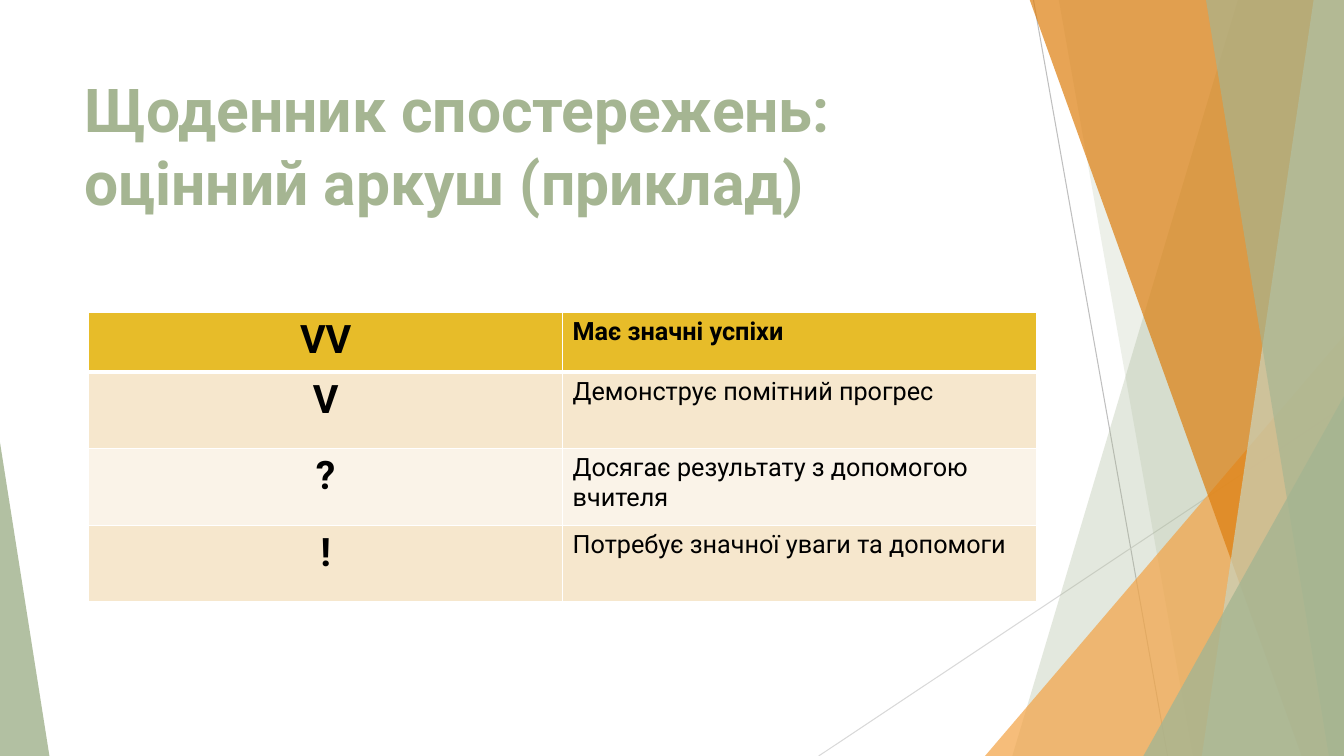
from lxml import etree
from pptx import Presentation, util as u
from pptx.dml.color import RGBColor
from pptx.enum import shapes, text
from pptx.oxml import ns

PX = 9144  # EMU, 100 px to the inch
WIDTH, HEIGHT = 1333, 750
SAGE, AMBER, ORANGE, PALE_SAGE = "A5B592", "F3A447", "DD7E0E", "C9D3BE"
GOLD, CREAM, IVORY = "E7BC29", "F6E7CD", "FAF3E8"
BLACK, WHITE = "000000", "FFFFFF"


def rgb(code):
    return RGBColor.from_string(code)


def px(*lengths):
    return [u.Emu(length * PX) for length in lengths]


def add_xml(parent, tag, **attributes):
    return etree.SubElement(parent, ns.qn(tag), **attributes)


class SlideBuilder:
    def __init__(self, slide, font_name):
        self.slide = slide
        self.shapes = slide.shapes
        self.font_name = font_name

    def line(self, start, end, color):
        ray = self.shapes.add_connector(
            shapes.MSO_CONNECTOR.STRAIGHT, *px(*start, *end))
        ray.line.color.rgb = rgb(color)
        ray.line.width = u.Pt(0.75)
        add_xml(ray._element.spPr, "a:effectLst")

    def paint(self, shape, color, opacity):
        shape.shadow.inherit = False
        shape.fill.solid()
        shape.fill.fore_color.rgb = rgb(color)
        shape.line.fill.background()
        color_xml = shape._element.spPr.find(".//" + ns.qn("a:srgbClr"))
        add_xml(color_xml, "a:alpha", val=str(opacity * 1000))

    def ribbon(self, top_x, bottom_x, color, opacity):
        """Fill from a slanted left edge to the right side of the slide."""
        outline = self.shapes.build_freeform(top_x, -1, scale=PX)
        outline.add_line_segments(
            [(WIDTH, -1), (WIDTH, HEIGHT), (bottom_x, HEIGHT)])
        self.paint(outline.convert_to_shape(), color, opacity)

    def triangle(self, left, top, width, apex, color, opacity):
        """Stand a triangle on the bottom edge, its apex at 0 (left) to 1 (right)."""
        wedge = self.shapes.add_shape(
            shapes.MSO_SHAPE.ISOSCELES_TRIANGLE,
            *px(left, top, width, HEIGHT - top))
        wedge.adjustments[0] = apex
        self.paint(wedge, color, opacity)

    def fill_text(self, frame, words, size, color, bold, align):
        frame.word_wrap = True
        frame.text = words
        for paragraph in frame.paragraphs:
            paragraph.alignment = align
            for run in paragraph.runs:
                style = {"name": self.font_name, "size": u.Pt(size), "bold": bold}
                for key, value in style.items():
                    setattr(run.font, key, value)
                run.font.color.rgb = rgb(color)

    def title(self, words, box, size, color):
        frame = self.shapes.add_textbox(*px(*box)).text_frame
        frame.vertical_anchor = text.MSO_ANCHOR.TOP
        self.fill_text(frame, words, size, color, True, text.PP_ALIGN.LEFT)

    def borders(self, cell, bottom_width):
        properties = cell._tc.get_or_add_tcPr()
        widths = {"a:lnL": 1, "a:lnR": 1, "a:lnT": 1, "a:lnB": bottom_width}
        for position, (tag, width) in enumerate(widths.items()):
            edge = etree.Element(ns.qn(tag), w=str(u.Pt(width)))
            add_xml(add_xml(edge, "a:solidFill"), "a:srgbClr", val=WHITE)
            properties.insert(position, edge)

    def table(self, rows, box, row_heights, fills):
        grid = self.shapes.add_table(len(rows), 2, *px(*box)).table
        for index, (marks, height, fill) in enumerate(zip(rows, row_heights, fills)):
            grid.rows[index].height = px(height)[0]
            header = index == 0
            formats = [(28, True, text.PP_ALIGN.CENTER),
                       (18, header, text.PP_ALIGN.LEFT)]
            for column, (words, (size, bold, align)) in enumerate(zip(marks, formats)):
                cell = grid.cell(index, column)
                cell.fill.solid()
                cell.fill.fore_color.rgb = rgb(fill)
                self.borders(cell, 3 if header else 1)
                self.fill_text(cell.text_frame, words, size, BLACK, bold, align)


def main():
    deck = Presentation()
    deck.slide_width, deck.slide_height = px(WIDTH, HEIGHT)
    builder = SlideBuilder(deck.slides.add_slide(deck.slide_layouts[6]), "Roboto")

    builder.line((1025, 0), (1158, HEIGHT), "BFBFBF")
    builder.line((WIDTH, 403), (812, HEIGHT), "D9D9D9")
    builder.ribbon(1228, 1004, SAGE, 30)
    builder.ribbon(1050, 1183, SAGE, 20)
    builder.triangle(977, 333, 356, 1, AMBER, 72)
    builder.ribbon(1021, 1291, ORANGE, 70)
    builder.ribbon(1303, 1192, PALE_SAGE, 70)
    builder.ribbon(1196, 1318, SAGE, 65)
    builder.triangle(1134, 393, 199, 1, SAGE, 80)
    builder.triangle(0, 439, 49, 0, SAGE, 85)

    builder.title("Щоденник спостережень:\vоцінний аркуш (приклад)",
                  (74, 67, 940, 144), 43.2, SAGE)
    ratings = [
        ("VV", "Має значні успіхи"),
        ("V", "Демонструє помітний прогрес"),
        ("?", "Досягає результату з допомогою вчителя"),
        ("!", "Потребує значної уваги та допомоги"),
    ]
    builder.table(ratings, (88, 310, 940, 286), (59, 76, 76, 76),
                  (GOLD, CREAM, IVORY, CREAM))
    deck.save("out.pptx")


if __name__ == "__main__":
    main()
